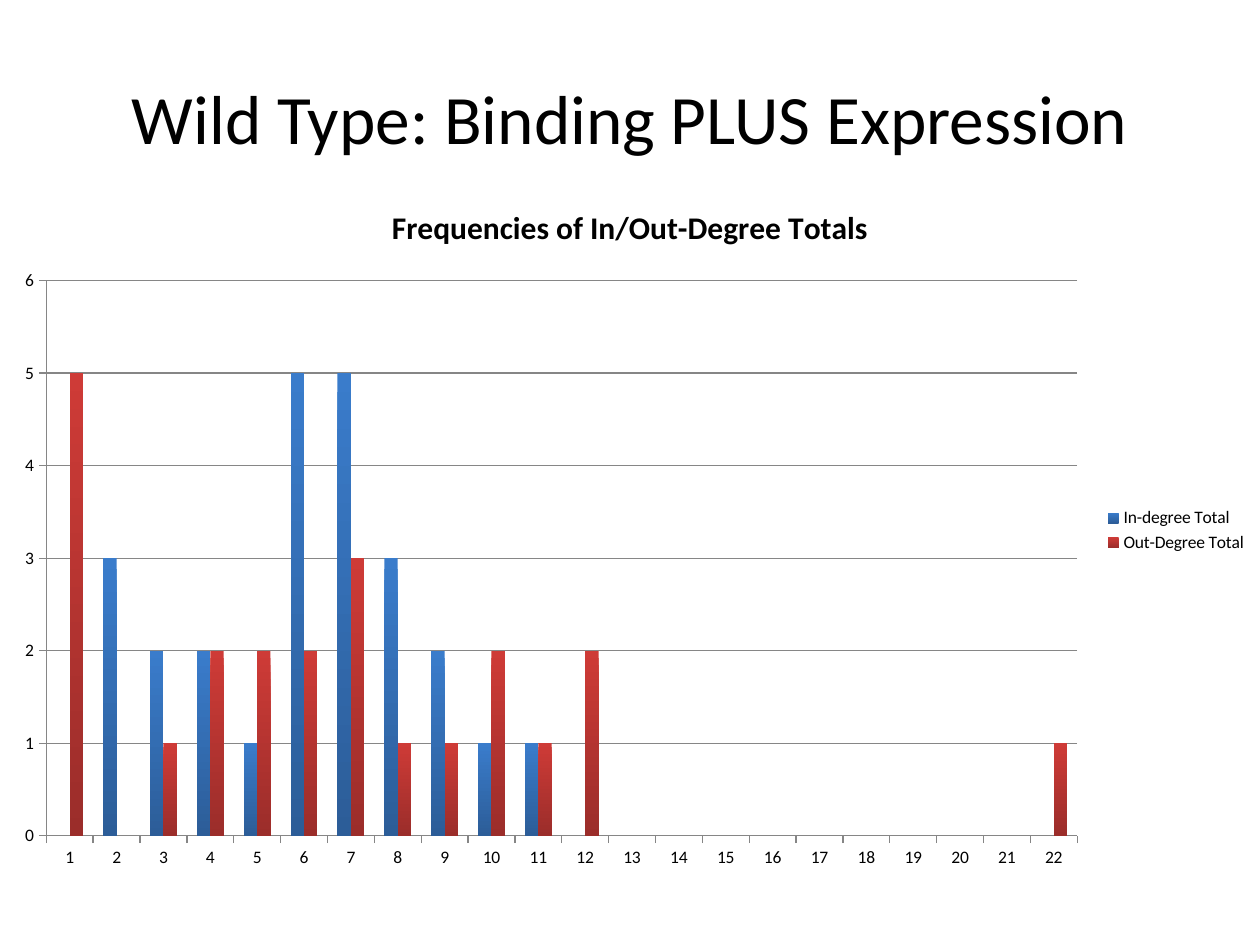
import pptx
import pptx.chart.data
import pptx.dml.color
import pptx.enum.chart
import pptx.enum.text
import pptx.util
from pptx.util import Inches, Pt

RGBColor = pptx.dml.color.RGBColor
BLACK = RGBColor(0x00, 0x00, 0x00)
GRAY = RGBColor(0x86, 0x86, 0x86)
BLUE = (RGBColor(0x3A, 0x7C, 0xCB), RGBColor(0x2C, 0x5D, 0x98))
RED = (RGBColor(0xCE, 0x3B, 0x37), RGBColor(0x9B, 0x2D, 0x2A))
FONT = "Calibri"

DEGREES = range(1, 23)
# Frequency of each degree; degrees that are not listed have none.
IN_DEGREE = {2: 3, 3: 2, 4: 2, 5: 1, 6: 5, 7: 5, 8: 3, 9: 2, 10: 1, 11: 1}
OUT_DEGREE = {1: 5, 3: 1, 4: 2, 5: 2, 6: 2, 7: 3, 8: 1, 9: 1, 10: 2, 11: 1,
              12: 2, 22: 1}
SERIES = [("In-degree Total", IN_DEGREE, BLUE),
          ("Out-Degree Total", OUT_DEGREE, RED)]


def style_font(font, size, bold=False):
    font.name = FONT
    font.size = Pt(size)
    font.bold = bold
    font.color.rgb = BLACK


def set_title(slide, text):
    title = slide.shapes.title
    title.left, title.top = Inches(0.5), Inches(0.3)
    title.width, title.height = Inches(9), Inches(1.25)
    tf = title.text_frame
    tf.word_wrap = True
    tf.vertical_anchor = pptx.enum.text.MSO_ANCHOR.MIDDLE
    p = tf.paragraphs[0]
    p.alignment = pptx.enum.text.PP_ALIGN.CENTER
    r = p.add_run()
    r.text = text
    style_font(r.font, 39.6)


def fill_downward(fill, colors):
    """Fill with a gradient that runs from the top colour to the bottom one."""
    fill.gradient()
    fill.gradient_angle = 270
    for stop, color in zip(fill.gradient_stops, colors):
        stop.color.rgb = color


def style_axis(axis):
    axis.major_tick_mark = pptx.enum.chart.XL_TICK_MARK.OUTSIDE
    axis.minor_tick_mark = pptx.enum.chart.XL_TICK_MARK.NONE
    axis.format.line.color.rgb = GRAY
    axis.format.line.width = Pt(0.75)
    style_font(axis.tick_labels.font, 10)


def add_degree_chart(slide, title):
    data = pptx.chart.data.CategoryChartData(number_format="General")
    data.categories = [str(degree) for degree in DEGREES]
    for name, counts, _ in SERIES:
        data.add_series(name, [counts.get(degree, 0) for degree in DEGREES])
    chart = slide.shapes.add_chart(
        pptx.enum.chart.XL_CHART_TYPE.COLUMN_CLUSTERED,
        Inches(0), Inches(1.42), Inches(10), Inches(5.58), data).chart
    style_font(chart.font, 10)

    chart.has_title = True
    r = chart.chart_title.text_frame.paragraphs[0].add_run()
    r.text = title
    style_font(r.font, 18, bold=True)
    chart.chart_title.include_in_layout = False

    chart.has_legend = True
    chart.legend.position = pptx.enum.chart.XL_LEGEND_POSITION.RIGHT
    chart.legend.include_in_layout = False
    style_font(chart.legend.font, 10)

    for axis in (chart.category_axis, chart.value_axis):
        style_axis(axis)
    values = chart.value_axis
    values.minimum_scale, values.maximum_scale, values.major_unit = 0, 6, 1
    values.has_major_gridlines = True
    values.major_gridlines.format.line.color.rgb = GRAY
    values.major_gridlines.format.line.width = Pt(0.75)

    plot = chart.plots[0]
    plot.gap_width = 150
    plot.overlap = 0
    plot.vary_by_categories = False
    for series, (_, _, colors) in zip(plot.series, SERIES):
        series.invert_if_negative = False
        fill_downward(series.format.fill, colors)


def main():
    prs = pptx.Presentation()
    prs.slide_width, prs.slide_height = Inches(10), Inches(7.5)
    slide = prs.slides.add_slide(prs.slide_layouts[5])
    set_title(slide, "Wild Type: Binding PLUS Expression")
    add_degree_chart(slide, "Frequencies of In/Out-Degree Totals")
    prs.save("out.pptx")


if __name__ == "__main__":
    main()
